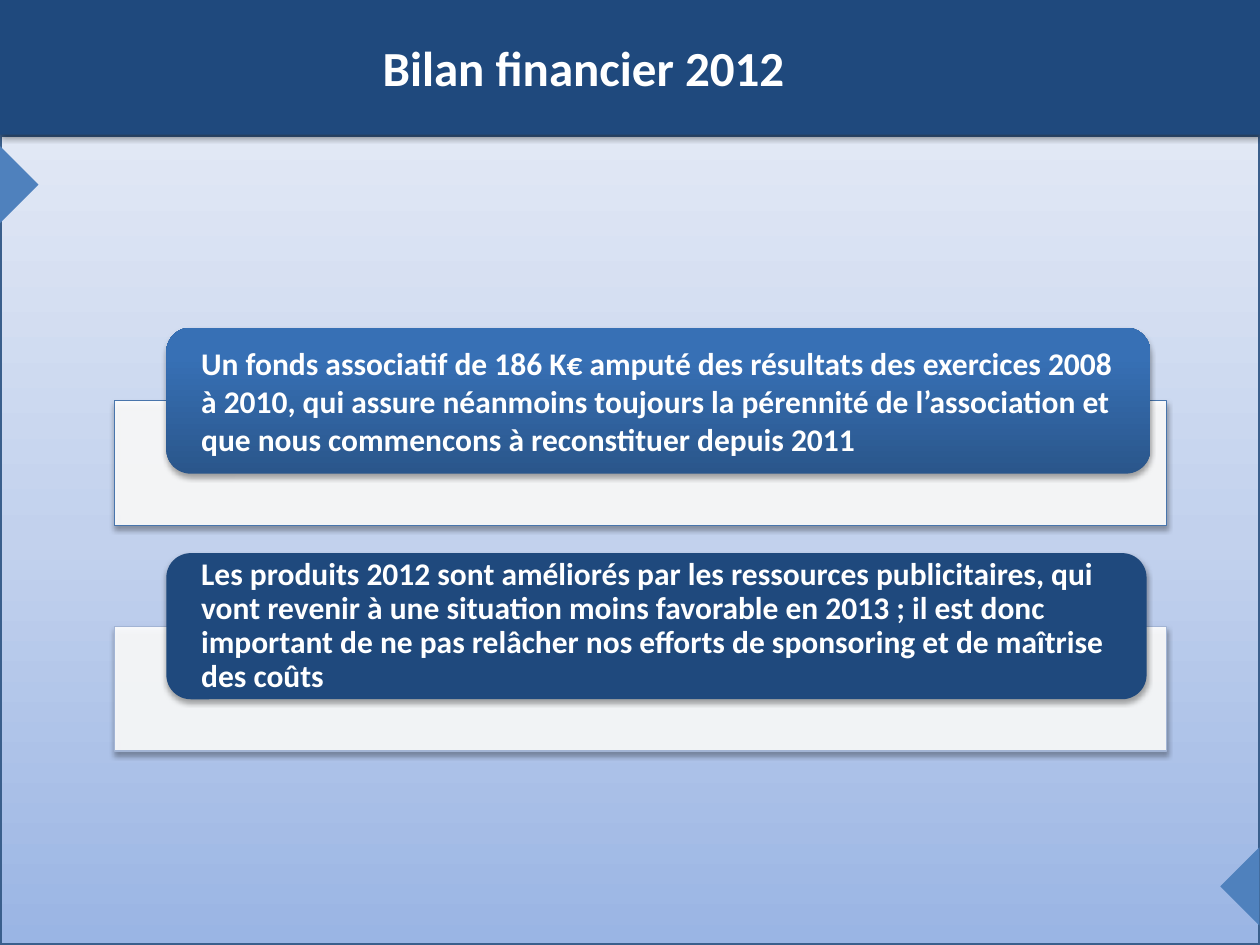
from dataclasses import dataclass

import pptx
import pptx.dml.color
import pptx.enum.shapes
import pptx.enum.text
import pptx.oxml
import pptx.oxml.ns
import pptx.util
from pptx.util import Inches

COLORS = {
    "navy": "1F497D",
    "accent": "4F81BD",
    "frame": "3A5F8C",
    "white": "FFFFFF",
    "black": "000000",
    "blue_edge": "4875AC",
    "pale_edge": "A2B4D4",
}
BACKDROP_STOPS = [(0, "9AB5E4"), (50, "C2D1ED"), (100, "E1E8F5")]
BLUE_STOPS = [(0, "2A568B"), (80, "3770B5"), (100, "3570B8")]
SHAPES = pptx.enum.shapes.MSO_SHAPE
ALIGN = pptx.enum.text.PP_ALIGN


@dataclass
class Message:
    top: float
    width: float
    fill: str | list
    panel_edge: str
    line_spacing: float
    text: str


MESSAGES = [
    Message(2.6, 7.81, BLUE_STOPS, "blue_edge", 1.0,
            "Un fonds associatif de 186 K€ amputé des résultats des exercices 2008 "
            "à 2010, qui assure néanmoins toujours la pérennité de l’association et "
            "que nous commencons à reconstituer depuis 2011"),
    Message(4.39, 7.78, "navy", "pale_edge", 0.9,
            "Les produits 2012 sont améliorés par les ressources publicitaires, qui "
            "vont revenir à une situation moins favorable en 2013 ; il est donc "
            "important de ne pas relâcher nos efforts de sponsoring et de maîtrise "
            "des coûts"),
]


def rgb(name: str) -> pptx.dml.color.RGBColor:
    return pptx.dml.color.RGBColor.from_string(COLORS[name])


def add_child(parent, tag: str, **attributes):
    child = pptx.oxml.ns.qn(tag)
    element = parent.makeelement(child, {k: str(v) for k, v in attributes.items()})
    parent.append(element)
    return element


def fill_gradient(shape, stops: list) -> None:
    """Fill with (percent, hex) stops running from bottom to top."""
    shape.fill.gradient()
    shape.fill.gradient_angle = 90
    stop_list = shape._element.spPr.find(".//" + pptx.oxml.ns.qn("a:gsLst"))
    for old_stop in list(stop_list):
        stop_list.remove(old_stop)
    for percent, color in stops:
        stop = add_child(stop_list, "a:gs", pos=percent * 1000)
        add_child(stop, "a:srgbClr", val=color)


def add_soft_shadow(shape) -> None:
    effects = shape._element.spPr.find(pptx.oxml.ns.qn("a:effectLst"))
    shadow = add_child(effects, "a:outerShdw", blurRad=pptx.util.Pt(3.1),
                       dist=pptx.util.Pt(1.8), dir=5400000, rotWithShape=0)
    color = add_child(shadow, "a:srgbClr", val=COLORS["black"])
    add_child(color, "a:alpha", val=35000)


def draw_shape(slide, kind, left: float, top: float, width: float, height: float,
               fill: str | list, *, edge: str | None = None, edge_width: float = 0.75,
               opacity: int = 100, rotation: int = 0, shadow: bool = False):
    shape = slide.shapes.add_shape(
        kind, Inches(left), Inches(top), Inches(width), Inches(height))
    shape.rotation = rotation
    shape.shadow.inherit = False
    if isinstance(fill, list):
        fill_gradient(shape, fill)
    else:
        shape.fill.solid()
        shape.fill.fore_color.rgb = rgb(fill)
    if opacity < 100:
        color = shape._element.spPr.find(".//" + pptx.oxml.ns.qn("a:srgbClr"))
        add_child(color, "a:alpha", val=opacity * 1000)
    if edge:
        shape.line.color.rgb = rgb(edge)
        shape.line.width = pptx.util.Pt(edge_width)
    else:
        shape.line.fill.background()
    if shadow:
        add_soft_shadow(shape)
    return shape


def write_text(shape, text: str, *, size: int, align=ALIGN.LEFT,
               line_spacing: float = 1.0, side: float = 0.1, edge: float = 0.05) -> None:
    """Write bold white text; side and edge are the insets in inches."""
    frame = shape.text_frame
    frame.word_wrap = True
    frame.vertical_anchor = pptx.enum.text.MSO_ANCHOR.MIDDLE
    frame.margin_left = frame.margin_right = Inches(side)
    frame.margin_top = frame.margin_bottom = Inches(edge)
    paragraph = frame.paragraphs[0]
    paragraph.alignment = align
    paragraph.line_spacing = line_spacing
    run = paragraph.add_run()
    run.text = text
    run.font.name = "Calibri"
    run.font.size = pptx.util.Pt(size)
    run.font.bold = True
    run.font.color.rgb = rgb("white")


def draw_message(slide, message: Message) -> None:
    draw_shape(slide, SHAPES.RECTANGLE, 0.91, message.top + 0.58, 8.35, 0.99, "white",
               edge=message.panel_edge, opacity=90, shadow=True)
    banner = draw_shape(slide, SHAPES.ROUNDED_RECTANGLE, 1.32, message.top,
                        message.width, 1.16, message.fill, shadow=True)
    write_text(banner, message.text, size=18, line_spacing=message.line_spacing,
               side=0.22, edge=0)


def main() -> None:
    deck = pptx.Presentation()
    deck.slide_width, deck.slide_height = Inches(10), Inches(7.5)
    slide = deck.slides.add_slide(deck.slide_layouts[6])

    draw_shape(slide, SHAPES.RECTANGLE, 0, 1.07, 10, 6.43, BACKDROP_STOPS,
               edge="frame", edge_width=2)
    for left, top, rotation in [(-0.16, 1.31, 90), (9.53, 6.88, 270)]:
        draw_shape(slide, SHAPES.ISOSCELES_TRIANGLE, left, top, 0.62, 0.31, "accent",
                   rotation=rotation)
    draw_shape(slide, SHAPES.RECTANGLE, 0, 0, 10, 1.07, "navy", shadow=True)

    for message in MESSAGES:
        draw_message(slide, message)

    title = slide.shapes.add_textbox(Inches(2.09), Inches(0.21), Inches(5.08), Inches(0.64))
    write_text(title, "Bilan financier 2012", size=28, align=ALIGN.CENTER)

    deck.save("out.pptx")


if __name__ == "__main__":
    main()
